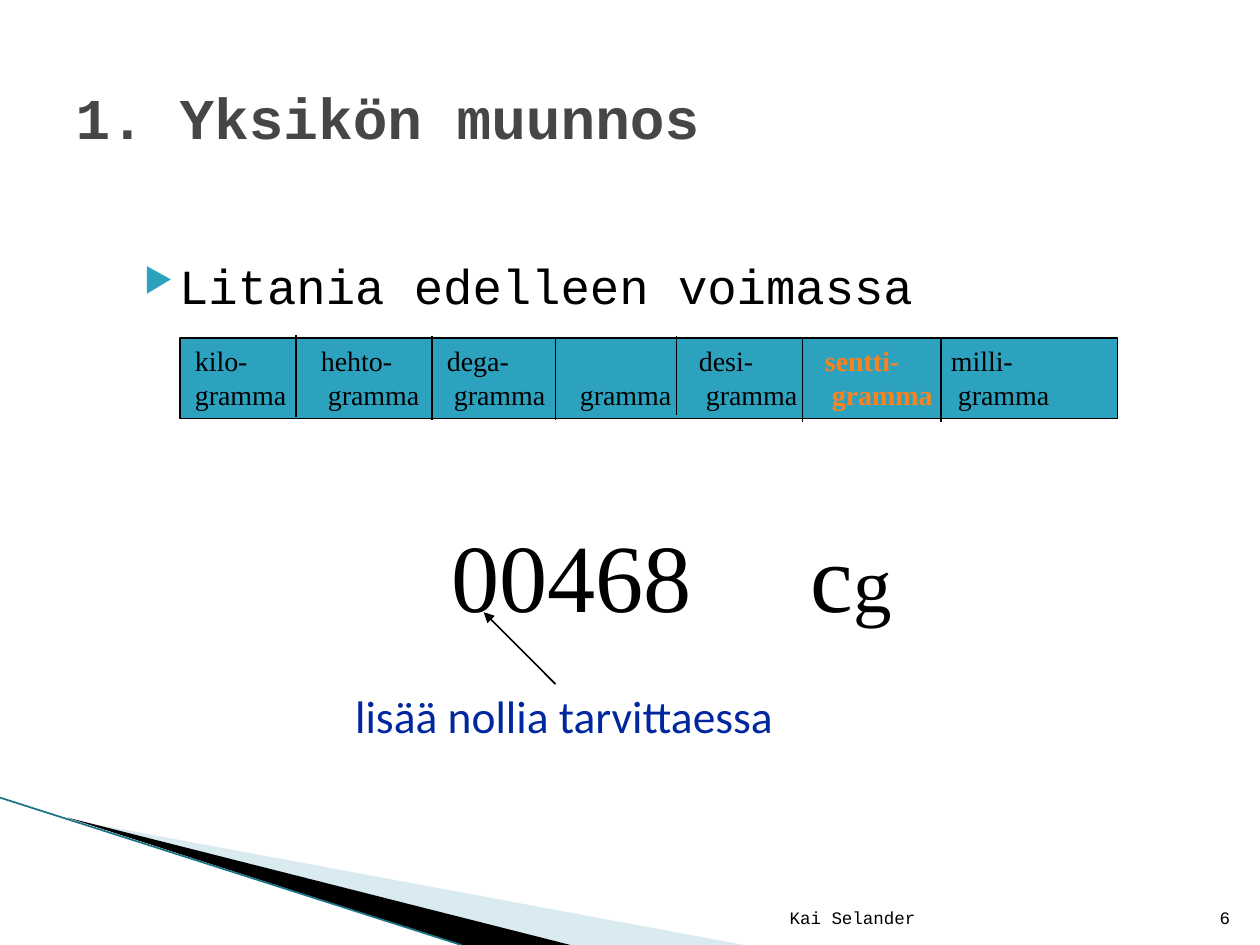
"""Build the slide on unit conversion with its row of gram prefixes."""
from dataclasses import dataclass
from typing import NamedTuple

from lxml import etree
from pptx import Presentation
from pptx.dml.color import RGBColor
from pptx.enum.shapes import MSO_CONNECTOR, MSO_SHAPE
from pptx.enum.text import MSO_ANCHOR, MSO_AUTO_SIZE, PP_ALIGN
from pptx.oxml.ns import qn
from pptx.util import Cm, Pt

STRAIGHT = MSO_CONNECTOR.STRAIGHT
RECT = MSO_SHAPE.RECTANGLE
TOP, MIDDLE, BOTTOM = MSO_ANCHOR.TOP, MSO_ANCHOR.MIDDLE, MSO_ANCHOR.BOTTOM
LEFT, RIGHT = PP_ALIGN.LEFT, PP_ALIGN.RIGHT
GROW, FIXED = MSO_AUTO_SIZE.SHAPE_TO_FIT_TEXT, MSO_AUTO_SIZE.NONE


@dataclass(frozen=True)
class Theme:
    """Fonts, colours and type sizes."""
    mono: str = "Courier New"
    serif: str = "Times New Roman"
    sans: str = "Calibri"
    black: str = "000000"
    grey: str = "464646"
    teal: str = "2DA2BF"
    deep: str = "1B7587"
    pale: str = "A0CBDC"
    orange: str = "FF8119"
    blue: str = "00279F"
    title: int = 33
    body: int = 28
    units: int = 16
    note: int = 26
    large: int = 55
    gram: int = 44
    foot: int = 10


THEME = Theme()


class Run(NamedTuple):
    """A stretch of text in one style."""
    text: str
    size: int
    font: str
    color: str = THEME.black
    bold: bool = False


class Box(NamedTuple):
    """A place in centimetres."""
    left: float
    top: float
    width: float
    height: float


class Rule(NamedTuple):
    """A straight line between two points in centimetres."""
    x1: float
    y1: float
    x2: float
    y2: float
    color: str = THEME.black
    arrow: bool = False


class Wedge(NamedTuple):
    """A filled triangle with its opacity in percent."""
    points: tuple
    color: str
    alpha: int = 100


@dataclass(frozen=True)
class Label:
    """A text box with its paragraphs and tab stops."""
    box: Box
    lines: tuple
    wrap: bool = False
    anchor: MSO_ANCHOR = TOP
    align: PP_ALIGN = LEFT
    tabs: tuple = ()


def unit(text: str, mark: bool = False) -> Run:
    """Make a run for the row of units."""
    color = THEME.orange if mark else THEME.black
    return Run(text, THEME.units, THEME.serif, color, mark)


def foot(text: str, left: float, width: float) -> Label:
    """Make a footer label."""
    run = Run(text, THEME.foot, THEME.mono)
    return Label(Box(left, 17.81, width, 1.02), ((run,),), True, BOTTOM, RIGHT)


WEDGES = (
    Wedge(((1.4, 16.52), (15, 19.05), (11.5, 19.05)), THEME.pale, 40),
    Wedge(((1.35, 16.48), (11.5, 19.05), (9.3, 19.05)), THEME.black),
)
EDGE = Rule(0, 16.08, 9.3, 19.05, THEME.deep)
BAR = Box(3.63, 6.81, 18.9, 1.63)
SPLITS = ((5.97, 6.76, 8.41), (8.71, 6.78, 8.46), (11.2, 6.83, 8.46),
          (13.64, 6.78, 8.36), (16.18, 6.83, 8.51), (18.97, 6.83, 8.51))
ARROW = Rule(9.75, 12.34, 11.2, 13.79, arrow=True)
TITLE = Label(Box(1.27, 0.76, 22.86, 3.18), ((Run(
    "1. Yksikön muunnos", THEME.title, THEME.mono, THEME.grey, True),),),
    True, MIDDLE)
POINT = Label(Box(2.34, 5.03, 22.35, 1.42), ((Run(
    "Litania edelleen voimassa", THEME.body, THEME.mono),),), True)
UNITS = Label(Box(3.68, 6.81, 17.73, 1.6), (
    (unit("kilo-\thehto-\tdega-\t\tdesi-\t"), unit("sentti-", True),
     unit("\tmilli-")),
    (unit("gramma" + "\t gramma" * 4 + "\t "), unit("gramma", True),
     unit("\t gramma"))), tabs=tuple(2.54 * step for step in range(1, 7)))
NOTE = Label(Box(6.91, 13.74, 9.04, 1.37), ((Run(
    "lisää nollia tarvittaessa", THEME.note, THEME.sans, THEME.blue),),))
VALUE = Label(Box(8.36, 10.29, 9.91, 2.57), ((
    Run("00468\tc", THEME.large, THEME.serif),
    Run("g", THEME.gram, THEME.serif)),), tabs=(7.24,))
FEET = (foot("Kai Selander", 12.17, 6.53), foot("6", 24.03, 1.02))


def place(box: tuple) -> tuple:
    """Turn a box into lengths."""
    return tuple(Cm(side) for side in box)


def paint(shape, color: str) -> None:
    """Fill a shape and drop its shadow."""
    shape.shadow.inherit = False
    shape.fill.solid()
    shape.fill.fore_color.rgb = RGBColor.from_string(color)


def draw_wedge(slide, wedge: Wedge) -> None:
    """Draw a corner triangle."""
    first, *rest = [(Cm(x), Cm(y)) for x, y in wedge.points]
    pen = slide.shapes.build_freeform(*first)
    pen.add_line_segments(rest)
    shape = pen.convert_to_shape()
    paint(shape, wedge.color)
    shape.line.fill.background()
    if wedge.alpha < 100:
        tone = shape.fill._xPr.find(".//" + qn("a:srgbClr"))
        etree.SubElement(tone, qn("a:alpha"), val=str(wedge.alpha * 1000))


def draw_rule(slide, rule: Rule) -> None:
    """Draw a line, with an arrowhead at its start if asked."""
    line = slide.shapes.add_connector(STRAIGHT, *place(rule[:4]))
    line.line.color.rgb = RGBColor.from_string(rule.color)
    line.line.width = Pt(1)
    if rule.arrow:
        stroke = line.line._get_or_add_ln()
        etree.SubElement(stroke, qn("a:headEnd"), type="triangle")
    etree.SubElement(line._element.spPr, qn("a:effectLst"))


def set_tabs(para, stops: tuple) -> None:
    """Give a paragraph its left tab stops."""
    props = para._p.get_or_add_pPr()
    tabs = etree.SubElement(props, qn("a:tabLst"))
    for stop in stops:
        etree.SubElement(tabs, qn("a:tab"), pos=str(Cm(stop)), algn="l")


def write(frame, label: Label) -> None:
    """Fill a text frame run by run."""
    frame.word_wrap = label.wrap
    frame.auto_size = FIXED if label.wrap else GROW
    frame.vertical_anchor = label.anchor
    for index, runs in enumerate(label.lines):
        para = frame.add_paragraph() if index else frame.paragraphs[0]
        para.alignment = label.align
        if label.tabs:
            set_tabs(para, label.tabs)
        for item in runs:
            run = para.add_run()
            run.text = item.text
            run.font.size = Pt(item.size)
            run.font.name = item.font
            run.font.bold = item.bold
            run.font.color.rgb = RGBColor.from_string(item.color)


def draw_label(slide, label: Label):
    """Add a text box and return its frame."""
    frame = slide.shapes.add_textbox(*place(label.box)).text_frame
    write(frame, label)
    return frame


def draw_point(slide) -> None:
    """Add the bulleted line."""
    frame = draw_label(slide, POINT)
    props = frame.paragraphs[0]._p.get_or_add_pPr()
    props.set("marL", str(Cm(1.02)))
    props.set("indent", str(Cm(-0.71)))
    tone = etree.SubElement(props, qn("a:buClr"))
    etree.SubElement(tone, qn("a:srgbClr"), val=THEME.teal)
    etree.SubElement(props, qn("a:buSzPct"), val="68000")
    etree.SubElement(props, qn("a:buChar"), char="▶")


def main() -> None:
    """Build and save the slide."""
    deck = Presentation()
    deck.slide_width, deck.slide_height = Cm(25.4), Cm(19.05)
    slide = deck.slides.add_slide(deck.slide_layouts[5])
    title = slide.shapes.title
    title.left, title.top, title.width, title.height = place(TITLE.box)
    write(title.text_frame, TITLE)
    for wedge in WEDGES:
        draw_wedge(slide, wedge)
    draw_rule(slide, EDGE)
    bar = slide.shapes.add_shape(RECT, *place(BAR))
    paint(bar, THEME.teal)
    bar.line.color.rgb = RGBColor.from_string(THEME.black)
    bar.line.width = Pt(1)
    draw_point(slide)
    draw_label(slide, UNITS)
    for x, top, end in SPLITS:
        draw_rule(slide, Rule(x, top, x, end))
    draw_label(slide, NOTE)
    draw_rule(slide, ARROW)
    draw_label(slide, VALUE).margin_left = Cm(0.74)
    for label in FEET:
        draw_label(slide, label)
    deck.save("out.pptx")


if __name__ == "__main__":
    main()
